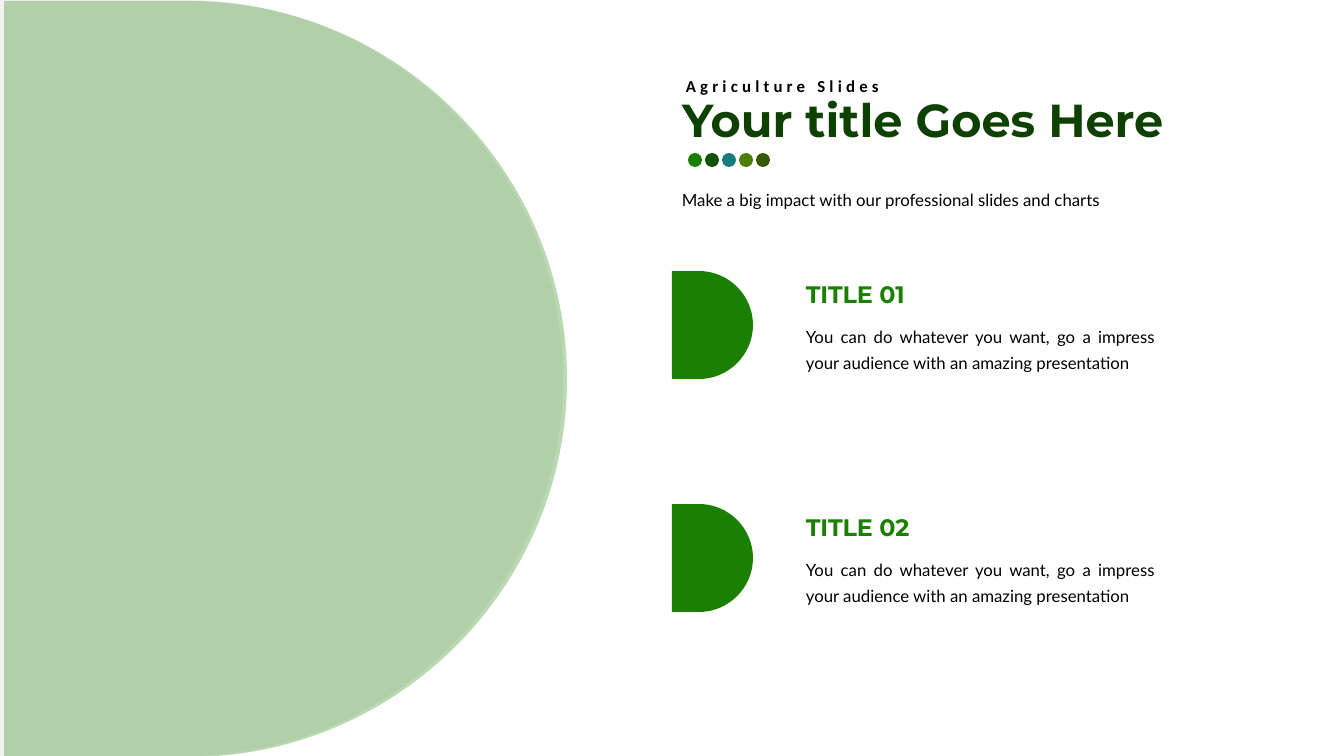
from dataclasses import dataclass

from lxml import etree
from pptx import Presentation
from pptx.dml.color import RGBColor
from pptx.enum.shapes import MSO_SHAPE
from pptx.enum.text import MSO_ANCHOR, MSO_AUTO_SIZE, PP_ALIGN
from pptx.oxml.ns import qn
from pptx.util import Pt

OVAL = MSO_SHAPE.OVAL
TOP, BOTTOM = MSO_ANCHOR.TOP, MSO_ANCHOR.BOTTOM
LEFT, JUST = PP_ALIGN.LEFT, PP_ALIGN.JUSTIFY
GROW = MSO_AUTO_SIZE.SHAPE_TO_FIT_TEXT
SCALE = 914400 / 100.8
BEND = 0.55

GREEN, BLACK = "1B7F01", "000000"
DOTS = (GREEN, "0E5401", "197C7C", "4C7F00", "355B00")


@dataclass(frozen=True)
class Box:
    left: int
    top: int
    width: int
    height: int

    def emu(self) -> tuple[int, int, int, int]:
        return px(self.left), px(self.top), px(self.width), px(self.height)


@dataclass(frozen=True)
class Item:
    top: int
    head: str
    body: str


BODY = "You can do whatever you want, go a impress your audience with an amazing presentation"
ITEMS = (Item(271, "TITLE 01", BODY), Item(504, "TITLE 02", BODY))


def px(size: float) -> int:
    return round(size * SCALE)


def paint(shape, color: str, alpha: int = 100) -> None:
    shape.shadow.inherit = False
    shape.fill.solid()
    shape.fill.fore_color.rgb = RGBColor.from_string(color)
    shape.line.fill.background()
    if alpha < 100:
        tint = shape.fill._xPr.find(".//" + qn("a:srgbClr"))
        etree.SubElement(tint, qn("a:alpha")).set("val", str(alpha * 1000))


def curve(line, *points: tuple[float, float]) -> None:
    line.tag = qn("a:cubicBezTo")
    for spot, (x, y) in enumerate(points):
        point = etree.Element(qn("a:pt"), x=str(round(x)), y=str(round(y)))
        line.insert(spot, point)


def add_dome(shapes, box: Box, color: str, alpha: int = 100) -> None:
    left, top, width, height = box.emu()
    radius = height / 2
    hub = width - radius
    pull = radius * BEND
    pen = shapes.build_freeform(left, top)
    pen.add_line_segments([
        (left + hub, top), (left + width, top + radius),
        (left + hub, top + height), (left, top + height),
    ], close=True)
    dome = pen.convert_to_shape()
    lines = dome._element.findall(".//" + qn("a:lnTo"))
    curve(lines[1], (hub + pull, 0), (width, radius - pull))
    curve(lines[2], (width, radius + pull), (hub + pull, height))
    paint(dome, color, alpha)


def write(shape, text: str, *, font: str, size: int, color: str = BLACK, bold: bool = False,
          gap: int = 0, lead: float = 0, align=LEFT, anchor=TOP, wrap: bool = True) -> None:
    frame = shape.text_frame
    frame.word_wrap = wrap
    frame.auto_size = GROW
    frame.vertical_anchor = anchor
    para = frame.paragraphs[0]
    para.alignment = align
    if lead:
        para.line_spacing = Pt(lead)
    run = para.add_run()
    run.text = text
    run.font.name = font
    run.font.size = Pt(size)
    run.font.bold = bold
    run.font.color.rgb = RGBColor.from_string(color)
    if gap:
        run._r.get_or_add_rPr().set("spc", str(gap))


def add_text(shapes, box: Box, text: str, **style) -> None:
    write(shapes.add_textbox(*box.emu()), text, **style)


def add_item(shapes, item: Item) -> None:
    add_dome(shapes, Box(672, item.top, 81, 108), GREEN)
    add_text(shapes, Box(796, item.top + 3, 369, 39), item.head, font="Montserrat",
             size=17, color=GREEN, bold=True, gap=-10, anchor=BOTTOM)
    add_text(shapes, Box(796, item.top + 45, 369, 62), item.body, font="Lato",
             size=12, lead=18.5, align=JUST)


def add_dots(shapes) -> None:
    group = shapes.add_group_shape()
    for index, color in enumerate(DOTS):
        spot = Box(688 + 17 * index, 153, 14, 14)
        paint(group.shapes.add_shape(OVAL, *spot.emu()), color)


def main() -> None:
    deck = Presentation()
    deck.slide_width, deck.slide_height = px(1344), px(756)
    shapes = deck.slides.add_slide(deck.slide_layouts[5]).shapes

    add_dome(shapes, Box(0, 0, 563, 756), "F2F2F2")
    add_dome(shapes, Box(4, 1, 563, 756), GREEN, alpha=30)

    title = shapes.title
    title.left, title.top, title.width, title.height = Box(672, 86, 519, 67).emu()
    write(title, "Your title Goes Here", font="Montserrat", size=33, color="0E4000",
          bold=True, wrap=False)
    add_text(shapes, Box(676, 71, 220, 30), "Agriculture Slides", font="Calibri",
             size=12, bold=True, gap=300, wrap=False)
    add_dots(shapes)
    add_text(shapes, Box(672, 185, 588, 30),
             "Make a big impact with our professional slides and charts", font="Lato", size=12)

    for item in ITEMS:
        add_item(shapes, item)

    deck.save("out.pptx")


if __name__ == "__main__":
    main()
